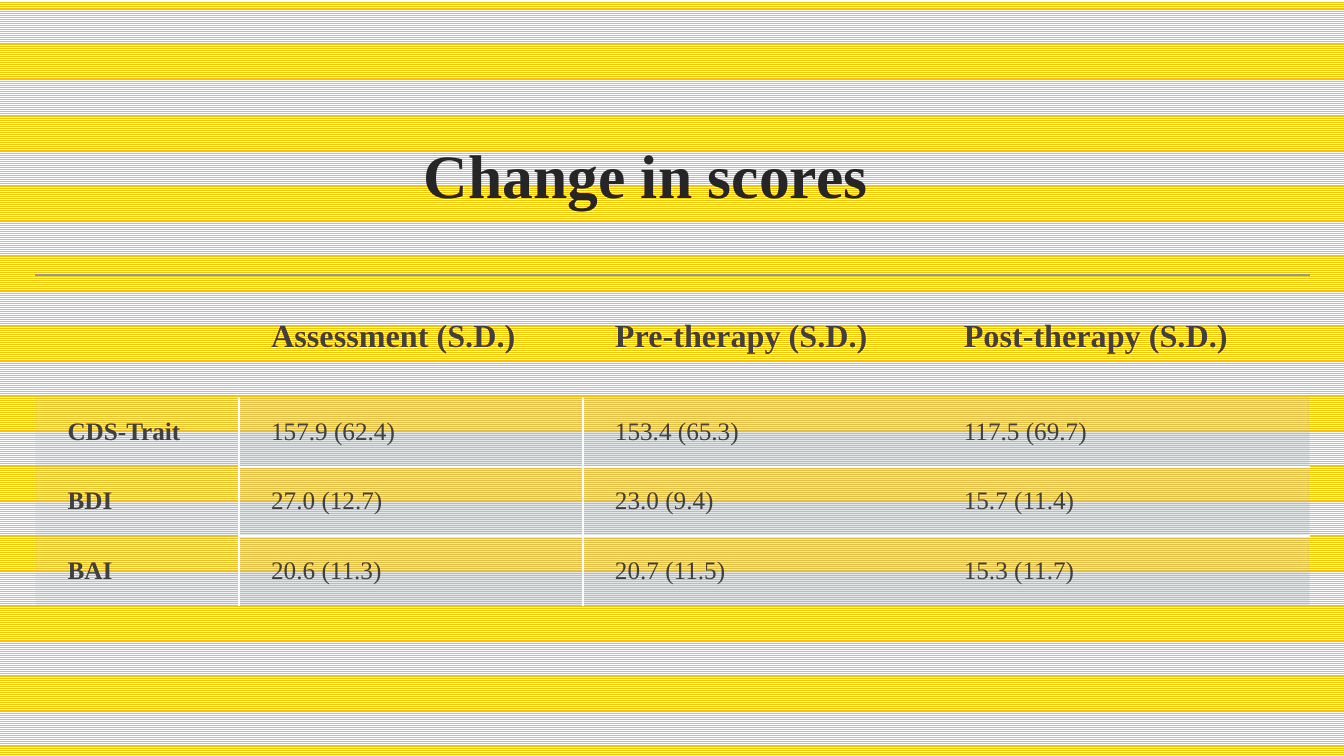
import dataclasses

import lxml.etree
import pptx
import pptx.dml.color
import pptx.enum.dml
import pptx.enum.text
import pptx.oxml.ns
import pptx.util

Inches = pptx.util.Inches
qn = pptx.oxml.ns.qn


@dataclasses.dataclass(frozen=True)
class Theme:
    """Colours, opacities and type of the slide."""
    font: str = "Times New Roman"
    title_size: int = 44
    header_size: int = 23
    body_size: int = 18
    title: str = "262626"
    text: str = "404040"
    stripe: str = "FFC000"
    paper: str = "FFFFFF"
    cell: str = "B4BCBE"
    label_opacity: int = 20
    value_opacity: int = 35
    rule: str = "8F9A9D"
    rule_opacity: int = 60
    rule_width: float = 1.5


THEME = Theme()
NO_STYLE = "{2D5ABB26-0587-4C30-8999-92F81FD0307C}"
COLUMNS = (2.02, 3.41, 3.46, 3.75)
ROWS = (1.21, 0.69, 0.69, 0.69)
SCORES = (
    ("", "Assessment (S.D.)", "Pre-therapy (S.D.)", "Post-therapy (S.D.)"),
    ("CDS-Trait", "157.9 (62.4)", "153.4 (65.3)", "117.5 (69.7)"),
    ("BDI", "27.0 (12.7)", "23.0 (9.4)", "15.7 (11.4)"),
    ("BAI", "20.6 (11.3)", "20.7 (11.5)", "15.3 (11.7)"),
)


def rgb(colour):
    """Turn a hex string into a colour."""
    return pptx.dml.color.RGBColor.from_string(colour)


def set_font(p, size, colour, bold):
    """Set the font of a paragraph."""
    p.font.name = THEME.font
    p.font.size = pptx.util.Pt(size)
    p.font.color.rgb = rgb(colour)
    p.font.bold = bold


def set_opacity(colour, percent):
    """Add an opacity to a colour element."""
    lxml.etree.SubElement(colour, qn("a:alpha"), val=str(percent * 1000))


def add_border(cell, side, colour, opacity=100):
    """Draw one side of a cell; sides go in the order L, R, T, B."""
    width = str(pptx.util.Pt(THEME.rule_width))
    ln = lxml.etree.SubElement(cell._tc.get_or_add_tcPr(), qn("a:ln" + side), w=width)
    fill = lxml.etree.SubElement(ln, qn("a:solidFill"))
    set_opacity(lxml.etree.SubElement(fill, qn("a:srgbClr"), val=colour), opacity)


def style_cell(cell, row, col):
    """Set the margins, borders and fill of a cell from its place in the grid."""
    cell.vertical_anchor = pptx.enum.text.MSO_ANCHOR.MIDDLE
    cell.margin_left = Inches(0.32)
    cell.margin_top = cell.margin_right = cell.margin_bottom = Inches(0.17 if row else 0.19)
    if row == 0:
        add_border(cell, "T", THEME.rule, THEME.rule_opacity)
        cell.fill.background()
        return
    sides = {
        "L": col == 1,
        "R": col == 0,
        "T": col > 0 and row > 1,
        "B": col > 0 and row < len(ROWS) - 1,
    }
    for side, drawn in sides.items():
        if drawn:
            add_border(cell, side, THEME.paper)
    cell.fill.solid()
    cell.fill.fore_color.rgb = rgb(THEME.cell)
    colour = cell._tc.tcPr.find(qn("a:solidFill")).find(qn("a:srgbClr"))
    set_opacity(colour, THEME.value_opacity if col else THEME.label_opacity)


def add_background(s):
    """Fill the slide with horizontal stripes."""
    fill = s.background.fill
    fill.patterned()
    fill.pattern = pptx.enum.dml.MSO_PATTERN.LIGHT_HORIZONTAL
    fill.fore_color.rgb = rgb(THEME.stripe)
    fill.back_color.rgb = rgb(THEME.paper)


def add_title(s, text, left, top, width, height):
    """Place the centred title in the given box."""
    tf = s.shapes.add_textbox(*map(Inches, (left, top, width, height))).text_frame
    tf.word_wrap = True
    tf.vertical_anchor = pptx.enum.text.MSO_ANCHOR.MIDDLE
    p = tf.paragraphs[0]
    p.text = text
    p.alignment = pptx.enum.text.PP_ALIGN.CENTER
    set_font(p, THEME.title_size, THEME.title, True)


def add_scores(s, left, top):
    """Place the table of scores from the given corner."""
    box = map(Inches, (left, top, sum(COLUMNS), sum(ROWS)))
    table = s.shapes.add_table(len(ROWS), len(COLUMNS), *box).table
    table.horz_banding = False
    table.first_col = True
    table._tbl.tblPr.find(qn("a:tableStyleId")).text = NO_STYLE
    for column, width in zip(table.columns, COLUMNS):
        column.width = Inches(width)
    for row, height in enumerate(ROWS):
        table.rows[row].height = Inches(height)
        for col, text in enumerate(SCORES[row]):
            cell = table.cell(row, col)
            style_cell(cell, row, col)
            p = cell.text_frame.paragraphs[0]
            p.text = text
            size = THEME.body_size if row else THEME.header_size
            set_font(p, size, THEME.text, row == 0 or col == 0)


def main():
    """Build the slide and save it."""
    prs = pptx.Presentation()
    prs.slide_width = Inches(13.33)
    prs.slide_height = Inches(7.5)
    s = prs.slides.add_slide(prs.slide_layouts[6])
    add_background(s)
    add_title(s, "Change in scores", 0.39, 0.98, 12.03, 1.5)
    add_scores(s, 0.35, 2.73)
    prs.save("out.pptx")


if __name__ == "__main__":
    main()
